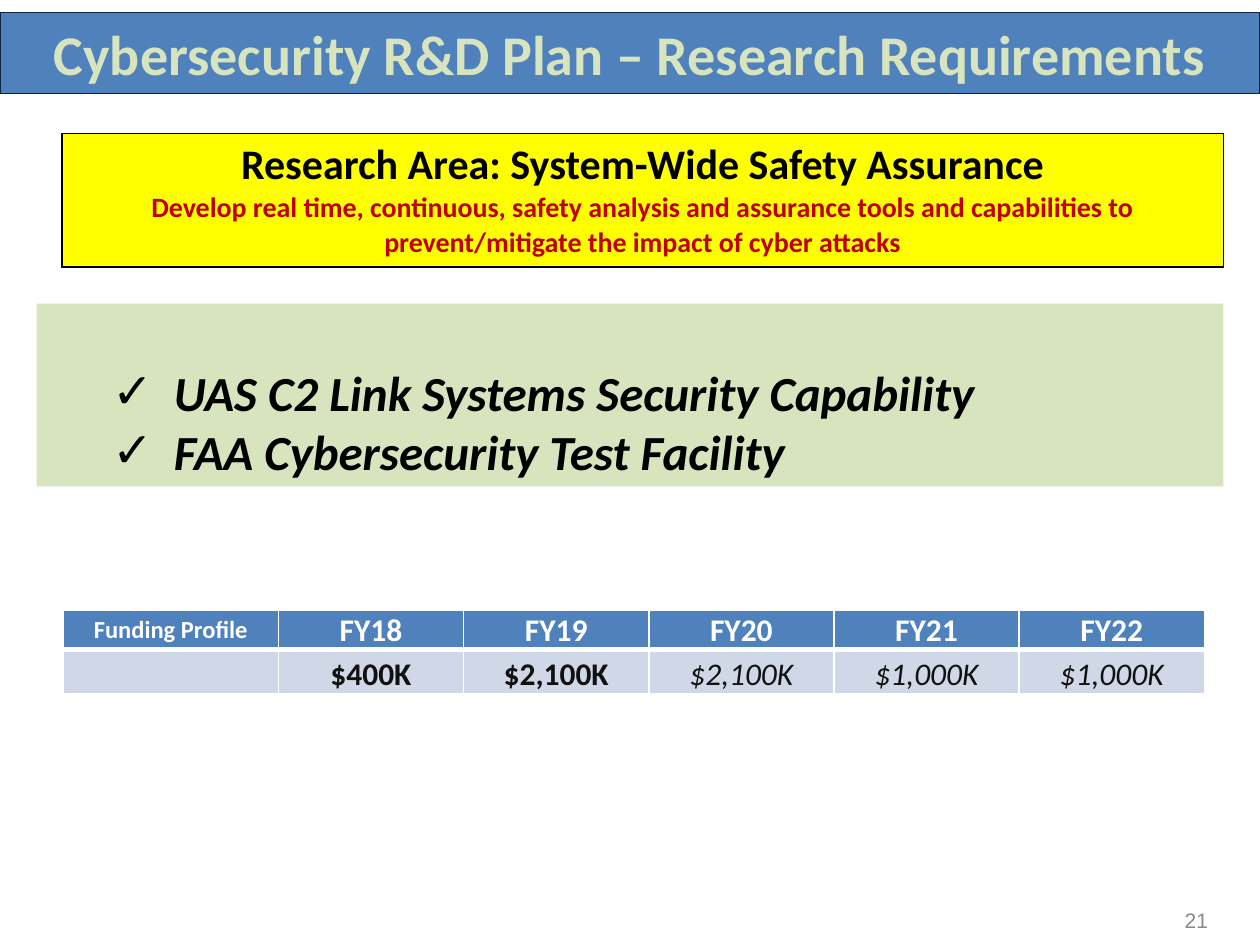
from lxml import etree
from pptx import Presentation
from pptx import util as u
from pptx.dml.color import RGBColor
from pptx.enum import text
from pptx.oxml import ns

BLUE = RGBColor(0x4F, 0x81, 0xBD)
NAVY = RGBColor(0x0F, 0x24, 0x3E)
GREEN = RGBColor(0xD7, 0xE4, 0xBD)
YELLOW = RGBColor(0xFF, 0xFF, 0x00)
RED = RGBColor(0xC0, 0x00, 0x00)
PALE = RGBColor(0xD0, 0xD8, 0xE8)
INK = RGBColor(0x11, 0x11, 0x11)
GREY = RGBColor(0x89, 0x89, 0x89)
BLACK = RGBColor(0, 0, 0)
WHITE = RGBColor(0xFF, 0xFF, 0xFF)
FUNDING = [("FY18", "$400K"), ("FY19", "$2,100K"), ("FY20", "$2,100K"),
           ("FY21", "$1,000K"), ("FY22", "$1,000K")]


class Page:
    """Hold the slide and its style, and add each kind of element."""

    def __init__(self, deck, font="Calibri"):
        self.slide = deck.slides.add_slide(deck.slide_layouts[1])
        self.font = font

    def place(self, box, left, top, width, height):
        box.left, box.top = u.Inches(left), u.Inches(top)
        box.width, box.height = u.Inches(width), u.Inches(height)

    def label(self, para, words, size, color, bold=True, italic=False,
              align=text.PP_ALIGN.CENTER, font=None):
        para.text = words
        para.alignment = align
        para.space_before = u.Pt(0)
        for span in para.runs:
            span.font.name = font or self.font
            span.font.size = u.Pt(size)
            span.font.color.rgb = color
            span.font.bold, span.font.italic = bold, italic

    def panel(self, box, area, fill, anchor):
        self.place(box, *area)
        box.fill.solid()
        box.fill.fore_color.rgb = fill
        frame = box.text_frame
        frame.word_wrap = True
        frame.auto_size = text.MSO_AUTO_SIZE.NONE
        frame.vertical_anchor = anchor
        return frame

    def title(self, words, area):
        box = self.slide.shapes.title
        frame = self.panel(box, area, BLUE, text.MSO_ANCHOR.MIDDLE)
        box.line.color.rgb = NAVY
        box.line.width = u.Pt(0.75)
        self.label(frame.paragraphs[0], words, 32, GREEN)

    def checklist(self, items, area):
        box = self.slide.placeholders[1]
        frame = self.panel(box, area, GREEN, text.MSO_ANCHOR.BOTTOM)
        frame.text = "\n".join(items)
        for para, item in zip(frame.paragraphs, items):
            self.label(para, item, 28, BLACK, italic=True, align=text.PP_ALIGN.LEFT)
            props = para._p.get_or_add_pPr()
            props.set("marL", str(u.Inches(0.99)))
            props.set("indent", str(u.Inches(-0.49)))
            etree.SubElement(props, ns.qn("a:buFont"), typeface="Arial")
            etree.SubElement(props, ns.qn("a:buChar"), char="✓")

    def table(self, left, top, widths, heights):
        grid = self.slide.shapes.add_table(
            len(heights), len(widths), u.Inches(left), u.Inches(top),
            u.Inches(sum(widths)), u.Inches(sum(heights))).table
        for column, width in zip(grid.columns, widths):
            column.width = u.Inches(width)
        for row, height in zip(grid.rows, heights):
            row.height = u.Inches(height)
        return grid

    def cell(self, cell, fill, border, margins, top=1, bottom=1):
        cell.fill.solid()
        cell.fill.fore_color.rgb = fill
        (cell.margin_left, cell.margin_top,
         cell.margin_right, cell.margin_bottom) = map(u.Inches, margins)
        props = cell._tc.get_or_add_tcPr()
        sides = {"lnL": 1, "lnR": 1, "lnT": top, "lnB": bottom}
        for index, (side, width) in enumerate(sides.items()):
            line = etree.Element(ns.qn(f"a:{side}"), w=str(u.Pt(width)))
            solid = etree.SubElement(line, ns.qn("a:solidFill"))
            etree.SubElement(solid, ns.qn("a:srgbClr"), val=str(border))
            props.insert(index, line)
        return cell.text_frame.paragraphs[0]

    def research_area(self, heading, goal):
        cell = self.table(0.49, 1.06, [9.22], [1.06]).cell(0, 0)
        para = self.cell(cell, YELLOW, BLACK, (0.1, 0.05, 0.1, 0.05))
        self.label(para, heading, 24, BLACK)
        self.label(cell.text_frame.add_paragraph(), goal, 16, RED)

    def funding(self, caption, years):
        grid = self.table(0.5, 4.84, [1.71] + [1.47] * len(years), [0.31, 0.34])
        for index, (year, amount) in enumerate([(caption, "")] + years):
            head, value = grid.cell(0, index), grid.cell(1, index)
            para = self.cell(head, BLUE, WHITE, (0.01, 0.01, 0.01, 0), bottom=3)
            head.vertical_anchor = text.MSO_ANCHOR.MIDDLE
            self.label(para, year, 18 if index else 14, WHITE)
            para = self.cell(value, PALE, WHITE, (0.07, 0, 0.07, 0), top=3)
            planned = index > 2
            self.label(para, amount, 18, INK, bold=not planned, italic=planned)
            para.line_spacing = 1.15

    def number(self, words, area):
        box = self.slide.shapes.add_textbox(*map(u.Inches, area))
        box.text_frame.word_wrap = True
        box.text_frame.vertical_anchor = text.MSO_ANCHOR.MIDDLE
        self.label(box.text_frame.paragraphs[0], words, 12, GREY, bold=False, font="Arial")


def main():
    deck = Presentation()
    deck.slide_width, deck.slide_height = u.Inches(10), u.Inches(7.5)
    page = Page(deck)
    page.title("Cybersecurity R&D Plan – Research Requirements", (0, 0.1, 10, 0.64))
    page.research_area(
        "Research Area: System-Wide Safety Assurance",
        "Develop real time, continuous, safety analysis and assurance tools and "
        "capabilities to prevent/mitigate the impact of cyber attacks")
    page.checklist(["UAS C2 Link Systems Security Capability",
                    "FAA Cybersecurity Test Facility"], (0.29, 2.41, 9.42, 1.45))
    page.funding("Funding Profile", FUNDING)
    page.number("21", (8.91, 7.1, 1.17, 0.4))
    deck.save("out.pptx")


if __name__ == "__main__":
    main()
